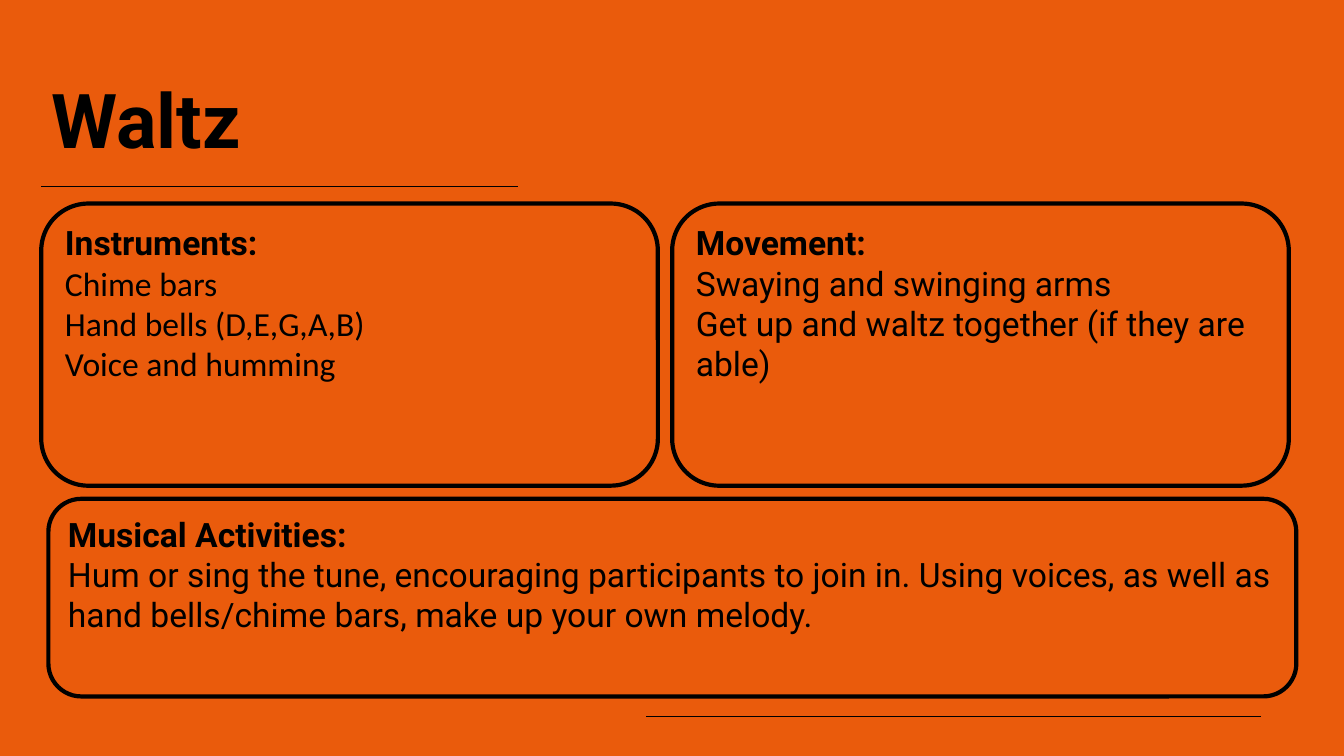
import pptx
import pptx.dml.color
import pptx.enum.shapes
import pptx.enum.text
import pptx.oxml.ns
import pptx.util
from lxml import etree

Cm = pptx.util.Cm
Pt = pptx.util.Pt
ANCHOR = pptx.enum.text.MSO_ANCHOR
ALIGN = pptx.enum.text.PP_ALIGN


def color(value):
    return pptx.dml.color.RGBColor.from_string(value)


class WaltzSlide:
    ink = "000000"
    background = "EA5B0C"
    heading_font = "Roboto"

    def __init__(self, presentation):
        self.slide = presentation.slides.add_slide(presentation.slide_layouts[5])
        fill = self.slide.background.fill
        fill.solid()
        fill.fore_color.rgb = color(self.background)

    def format_font(self, font, name, size, bold):
        formats = {"name": name, "size": Pt(size), "bold": bold}
        for attribute, value in formats.items():
            setattr(font, attribute, value)
        font.color.rgb = color(self.ink)

    def title(self, text, left, top, width, height):
        shape = self.slide.shapes.title
        position = {"left": left, "top": top, "width": width, "height": height}
        for attribute, value in position.items():
            setattr(shape, attribute, Cm(value))
        frame = shape.text_frame
        frame.text = text
        frame.word_wrap = True
        frame.vertical_anchor = ANCHOR.TOP
        paragraph = frame.paragraphs[0]
        paragraph.alignment = ALIGN.LEFT
        paragraph.line_spacing = 0.9
        self.format_font(paragraph.runs[0].font, self.heading_font, 54, True)

    def rule(self, left, right, y):
        connector = self.slide.shapes.add_connector(
            pptx.enum.shapes.MSO_CONNECTOR.STRAIGHT, Cm(left), Cm(y), Cm(right), Cm(y)
        )
        connector.line.color.rgb = color(self.ink)
        connector.line.width = Pt(1)
        properties = connector._element.spPr
        etree.SubElement(properties, pptx.oxml.ns.qn("a:effectLst"))

    def card(self, heading, lines, body_font, left, top, width, height):
        shape = self.slide.shapes.add_shape(
            pptx.enum.shapes.MSO_SHAPE.ROUNDED_RECTANGLE,
            Cm(left), Cm(top), Cm(width), Cm(height),
        )
        shape.shadow.inherit = False
        shape.fill.background()
        shape.line.color.rgb = color(self.ink)
        shape.line.width = Pt(3)
        frame = shape.text_frame
        frame.word_wrap = True
        frame.vertical_anchor = ANCHOR.TOP
        frame.text = "\n".join([heading, *lines])
        for index, paragraph in enumerate(frame.paragraphs):
            paragraph.alignment = ALIGN.LEFT
            is_heading = index == 0
            font_name = self.heading_font if is_heading else body_font
            self.format_font(paragraph.runs[0].font, font_name, 24, is_heading)


def main():
    presentation = pptx.Presentation()
    presentation.slide_width = Cm(33.87)
    presentation.slide_height = Cm(19.05)
    waltz = WaltzSlide(presentation)
    waltz.rule(16.29, 31.78, 18.06)
    waltz.rule(1.04, 13.06, 4.7)
    waltz.title("Waltz", 1.04, 1.96, 18.87, 3.2)
    waltz.card(
        "Musical Activities:",
        ["Hum or sing the tune, encouraging participants to join in. Using voices, "
         "as well as hand bells/chime bars, make up your own melody."],
        "Roboto", 1.22, 12.57, 31.45, 4.98,
    )
    upper_cards = [
        ("Instruments:",
         ["Chime bars", "Hand bells (D,E,G,A,B)", "Voice and humming"],
         "Calibri"),
        ("Movement:",
         ["Swaying and swinging arms", "Get up and waltz together (if they are able)"],
         "Roboto"),
    ]
    for column, (heading, lines, body_font) in enumerate(upper_cards):
        waltz.card(heading, lines, body_font, 1.04 + column * 15.9, 5.13, 15.54, 7.11)
    presentation.save("out.pptx")


if __name__ == "__main__":
    main()
